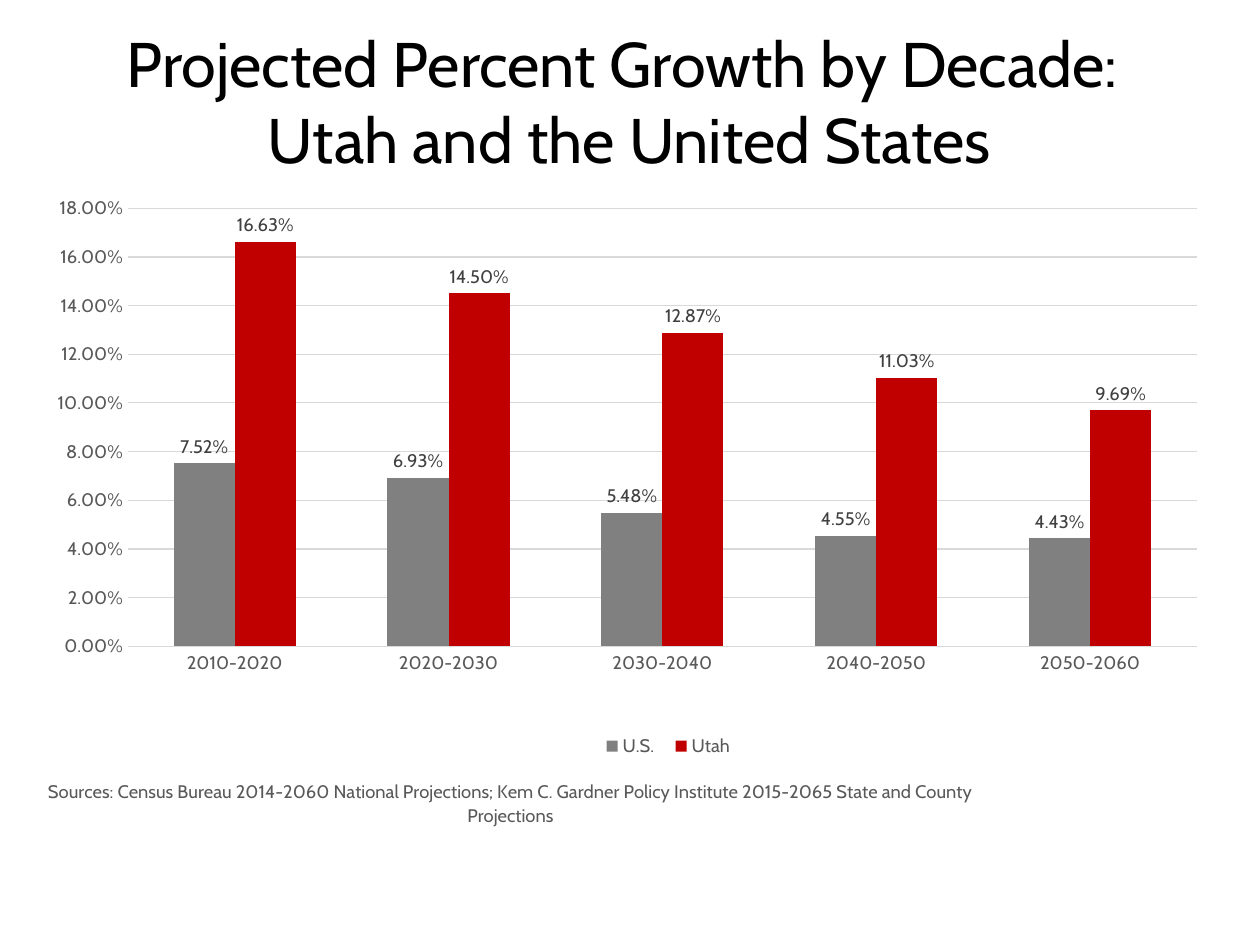
from lxml import etree
from pptx import Presentation
from pptx import util as u
from pptx.chart import data as chart_data
from pptx.dml.color import RGBColor
from pptx.enum import chart as ch, text
from pptx.oxml.ns import qn

BLACK = RGBColor(0x00, 0x00, 0x00)
LABEL_GRAY = RGBColor(0x40, 0x40, 0x40)
AXIS_GRAY = RGBColor(0x59, 0x59, 0x59)
GRID_GRAY = RGBColor(0xD9, 0xD9, 0xD9)
US_GRAY = RGBColor(0x80, 0x80, 0x80)
UTAH_RED = RGBColor(0xC0, 0x00, 0x00)
FONT = "Cabin"
PERCENT = "0.00%"


def style(font, size, color):
    font.name = FONT
    font.size = u.Pt(size)
    font.bold = False
    font.color.rgb = color


def place(part, index, **settings):
    """Give a chart part a manual layout, as fractions of the chart area."""
    layout = part.find(qn("c:layout"))
    if layout is None:
        layout = etree.Element(qn("c:layout"))
        part.insert(index, layout)
    manual = etree.SubElement(layout, qn("c:manualLayout"))
    for tag, value in settings.items():
        etree.SubElement(manual, qn(f"c:{tag}")).set("val", str(value))


prs = Presentation()
prs.slide_width, prs.slide_height = u.Cm(25.4), u.Cm(19.05)
slide = prs.slides.add_slide(prs.slide_layouts[5])

# Title
title = slide.shapes.title
title.left, title.top = u.Cm(0.76), u.Cm(0.36)
title.width, title.height = u.Cm(23.85), u.Cm(3.33)
heading = title.text_frame
heading.word_wrap = True
heading.auto_size = text.MSO_AUTO_SIZE.NONE
for i, line in enumerate(["Projected Percent Growth by Decade: ", "Utah and the United States"]):
    paragraph = heading.add_paragraph() if i else heading.paragraphs[0]
    paragraph.alignment = text.PP_ALIGN.CENTER
    paragraph.space_before = u.Pt(0)
    run = paragraph.add_run()
    run.text = line
    style(run.font, 36, BLACK)

# Growth chart
growth = chart_data.CategoryChartData(number_format=PERCENT)
growth.categories = [f"{year}-{year + 10}" for year in range(2010, 2060, 10)]
growth.add_series("U.S.", [0.0752, 0.0693, 0.0548, 0.0455, 0.0443])
growth.add_series("Utah", [0.1663, 0.145, 0.1287, 0.1103, 0.0969])
chart = slide.shapes.add_chart(
    ch.XL_CHART_TYPE.COLUMN_CLUSTERED,
    u.Cm(0.66), u.Cm(3.68), u.Cm(23.95), u.Cm(13.11), growth).chart
chart.has_title = False
style(chart.font, 10.5, BLACK)

columns = chart.plots[0]
columns.gap_width = 150
columns.overlap = 0
columns.vary_by_categories = False
for series, color in zip(columns.series, [US_GRAY, UTAH_RED]):
    series.format.fill.solid()
    series.format.fill.fore_color.rgb = color
    labels = series.data_labels
    labels.show_value = True
    labels.number_format = PERCENT
    labels.number_format_is_linked = False
    labels.position = ch.XL_LABEL_POSITION.OUTSIDE_END
    style(labels.font, 10.5, LABEL_GRAY)

decades, rates = chart.category_axis, chart.value_axis
for axis in (decades, rates):
    axis.major_tick_mark = axis.minor_tick_mark = ch.XL_TICK_MARK.NONE
    axis.format.line.fill.background()
    style(axis.tick_labels.font, 10.5, AXIS_GRAY)
rates.minimum_scale, rates.maximum_scale, rates.major_unit = 0, 0.18, 0.02
rates.tick_labels.number_format = PERCENT
rates.tick_labels.number_format_is_linked = False
rates.major_gridlines.format.line.color.rgb = GRID_GRAY
rates.major_gridlines.format.line.width = u.Pt(0.75)

# Sources stand below the legend as the title of the decade axis
sources = decades.axis_title.text_frame.paragraphs[0]
sources.alignment = text.PP_ALIGN.CENTER
run = sources.add_run()
run.text = ("Sources: Census Bureau 2014-2060 National Projections; Kem C. Gardner "
            "Policy Institute 2015-2065 State and County Projections")
style(run.font, 10.5, AXIS_GRAY)

chart.has_legend = True
chart.legend.position = ch.XL_LEGEND_POSITION.BOTTOM
chart.legend.include_in_layout = False
style(chart.legend.font, 10.5, AXIS_GRAY)

edges = {"xMode": "edge", "yMode": "edge"}
place(chart.element.xpath(".//c:plotArea")[0], 0, layoutTarget="inner", **edges,
      x=0.08, y=0.04, w=0.9, h=0.68)
place(chart.element.xpath(".//c:catAx/c:title")[0], 1, **edges, x=0.01, y=0.92)
place(chart.element.xpath(".//c:legend")[0], 1, **edges, x=0.47, y=0.85, w=0.13, h=0.05)

prs.save("out.pptx")
